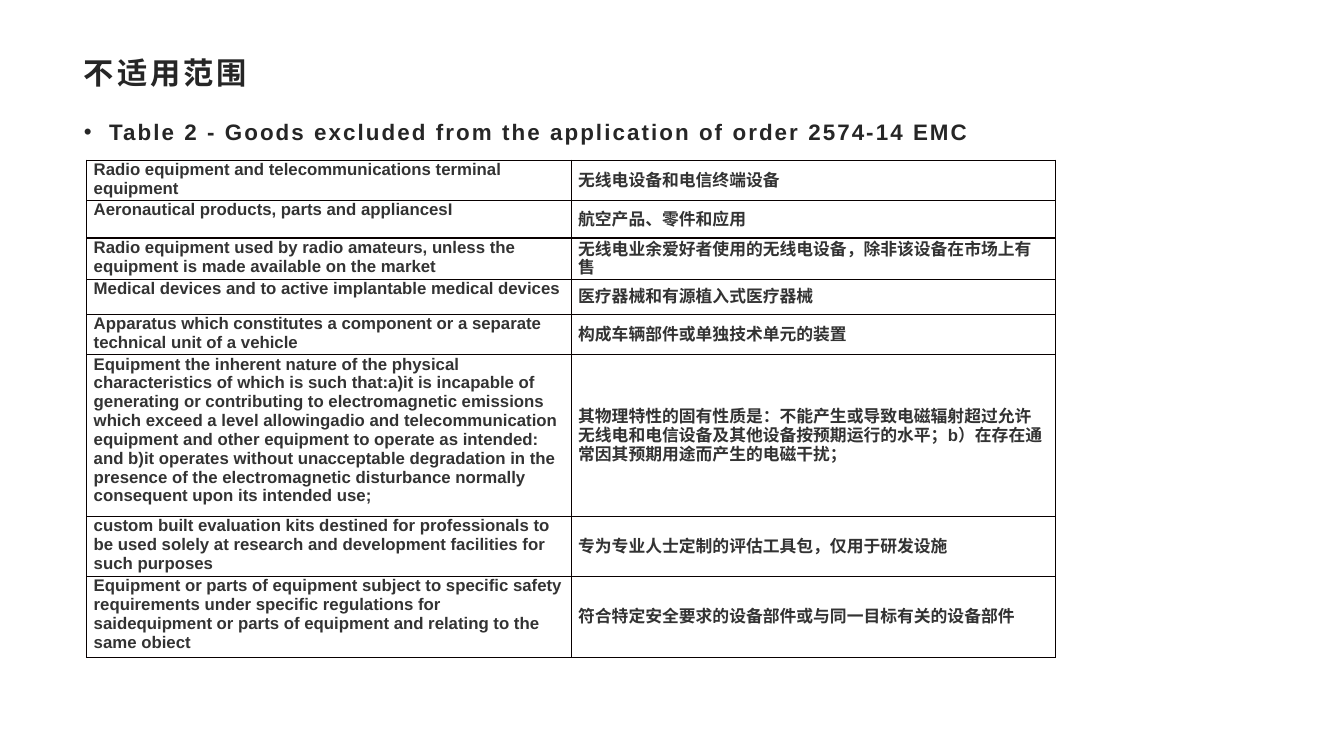
"""Build the slide listing goods excluded from the EMC order."""
from dataclasses import dataclass

from lxml import etree
from pptx import Presentation
from pptx import util as u
from pptx.dml import color
from pptx.enum import lang, text
from pptx.oxml import ns


@dataclass(frozen=True)
class Theme:
    font: str = "Arial"
    heading: str = "262626"
    body: str = "333333"
    border: str = "080000"
    title_size: float = 21.6
    subtitle_size: float = 16
    table_size: float = 12
    border_width: float = 1


@dataclass(frozen=True)
class Area:
    left: float
    top: float
    width: float
    height: float


@dataclass(frozen=True)
class Exclusion:
    english: str
    chinese: str
    height: float


THEME = Theme()
SLIDE_WIDTH, SLIDE_HEIGHT = u.Inches(13.33), u.Inches(7.5)
TITLE_AREA = Area(0.055, 0.064, 0.89, 0.064)
SUBTITLE_AREA = Area(0.055, 0.139, 0.89, 0.785)
TABLE_AREA = Area(0.0645, 0.212, 0.721, 0.511)
TITLE = "不适用范围"
SUBTITLE = "Table 2 - Goods excluded from the application of order 2574-14 EMC"
EXCLUSIONS = [
    Exclusion("Radio equipment and telecommunications terminal equipment",
              "无线电设备和电信终端设备", 0.4),
    Exclusion("Aeronautical products, parts and appliancesI",
              "航空产品、零件和应用", 0.37),
    Exclusion("Radio equipment used by radio amateurs, unless the equipment is "
              "made available on the market",
              "无线电业余爱好者使用的无线电设备，除非该设备在市场上有售", 0.41),
    Exclusion("Medical devices and to active implantable medical devices",
              "医疗器械和有源植入式医疗器械", 0.35),
    Exclusion("Apparatus which constitutes a component or a separate technical "
              "unit of a vehicle",
              "构成车辆部件或单独技术单元的装置", 0.36),
    Exclusion("Equipment the inherent nature of the physical characteristics of "
              "which is such that:a)it is incapable of generating or contributing "
              "to electromagnetic emissions which exceed a level allowingadio and "
              "telecommunication equipment and other equipment to operate as "
              "intended: and b)it operates without unacceptable degradation in the "
              "presence of the electromagnetic disturbance normally consequent "
              "upon its intended use;",
              "其物理特性的固有性质是：不能产生或导致电磁辐射超过允许无线电和电信设备"
              "及其他设备按预期运行的水平；b）在存在通常因其预期用途而产生的电磁干扰；",
              1.02),
    Exclusion("custom built evaluation kits destined for professionals to be used "
              "solely at research and development facilities for such purposes",
              "专为专业人士定制的评估工具包，仅用于研发设施", 0.39),
    Exclusion("Equipment or parts of equipment subject to specific safety "
              "requirements under specific regulations for saidequipment or parts "
              "of equipment and relating to the same obiect",
              "符合特定安全要求的设备部件或与同一目标有关的设备部件", 0.55),
]


def place(area: Area) -> tuple[int, int, int, int]:
    """Turn shares of the slide into left, top, width and height."""
    return (round(area.left * SLIDE_WIDTH), round(area.top * SLIDE_HEIGHT),
            round(area.width * SLIDE_WIDTH), round(area.height * SLIDE_HEIGHT))


def format_runs(paragraph, size: float, rgb: str, spacing: float = 0) -> None:
    """Give every run of a paragraph the bold slide font."""
    for run in paragraph.runs:
        run.font.size = u.Pt(size)
        run.font.bold = True
        run.font.name = THEME.font
        run.font.color.rgb = color.RGBColor.from_string(rgb)
        run.font.language_id = lang.MSO_LANGUAGE_ID.SIMPLIFIED_CHINESE
        properties = run.font._element
        properties.set("spc", str(round(spacing * 100)))
        etree.SubElement(properties, ns.qn("a:ea"), typeface=THEME.font)


def add_title(slide) -> None:
    """Move and format the title placeholder."""
    title = slide.shapes.title
    title.left, title.top, title.width, title.height = place(TITLE_AREA)
    frame = title.text_frame
    frame.text = TITLE
    frame.auto_size = text.MSO_AUTO_SIZE.NONE
    frame.vertical_anchor = text.MSO_ANCHOR.MIDDLE
    frame.paragraphs[0].alignment = text.PP_ALIGN.LEFT
    format_runs(frame.paragraphs[0], THEME.title_size, THEME.heading, 2)


def add_subtitle(slide) -> None:
    """Add the bulleted line above the table."""
    frame = slide.shapes.add_textbox(*place(SUBTITLE_AREA)).text_frame
    frame.text = SUBTITLE
    frame.word_wrap = True
    paragraph = frame.paragraphs[0]
    paragraph.line_spacing = 1.3
    paragraph.space_after = u.Pt(10)
    properties = paragraph._p.get_or_add_pPr()
    properties.set("marL", str(u.Inches(0.25)))
    properties.set("indent", str(-u.Inches(0.25)))
    etree.SubElement(properties, ns.qn("a:buFont"), typeface=THEME.font)
    etree.SubElement(properties, ns.qn("a:buChar"), char="•")
    format_runs(paragraph, THEME.subtitle_size, THEME.heading, 1.5)


def add_borders(cell) -> None:
    """Draw a thin line on all four sides of a cell."""
    properties = cell._tc.get_or_add_tcPr()
    for position, side in enumerate(("lnL", "lnR", "lnT", "lnB")):
        line = etree.Element(ns.qn(f"a:{side}"), w=str(u.Pt(THEME.border_width)))
        fill = etree.SubElement(line, ns.qn("a:solidFill"))
        etree.SubElement(fill, ns.qn("a:srgbClr"), val=THEME.border)
        properties.insert(position, line)


def fill_cell(cell, wording: str, anchor: text.MSO_ANCHOR) -> None:
    """Write and format one table cell."""
    cell.text_frame.text = wording
    cell.vertical_anchor = anchor
    cell.margin_left = cell.margin_right = u.Inches(0.07)
    cell.margin_top = cell.margin_bottom = 0
    cell.fill.background()
    add_borders(cell)
    format_runs(cell.text_frame.paragraphs[0], THEME.table_size, THEME.body)


def add_exclusions(slide) -> None:
    """Add the two-language table of excluded goods."""
    table = slide.shapes.add_table(len(EXCLUSIONS), 2, *place(TABLE_AREA)).table
    table.first_row = table.horz_banding = False
    for row, exclusion in enumerate(EXCLUSIONS):
        table.rows[row].height = u.Inches(exclusion.height)
        fill_cell(table.cell(row, 0), exclusion.english, text.MSO_ANCHOR.TOP)
        fill_cell(table.cell(row, 1), exclusion.chinese, text.MSO_ANCHOR.MIDDLE)


def main() -> None:
    """Build and save the presentation."""
    presentation = Presentation()
    presentation.slide_width, presentation.slide_height = SLIDE_WIDTH, SLIDE_HEIGHT
    slide = presentation.slides.add_slide(presentation.slide_layouts[5])
    add_title(slide)
    add_subtitle(slide)
    add_exclusions(slide)
    presentation.save("out.pptx")


if __name__ == "__main__":
    main()
